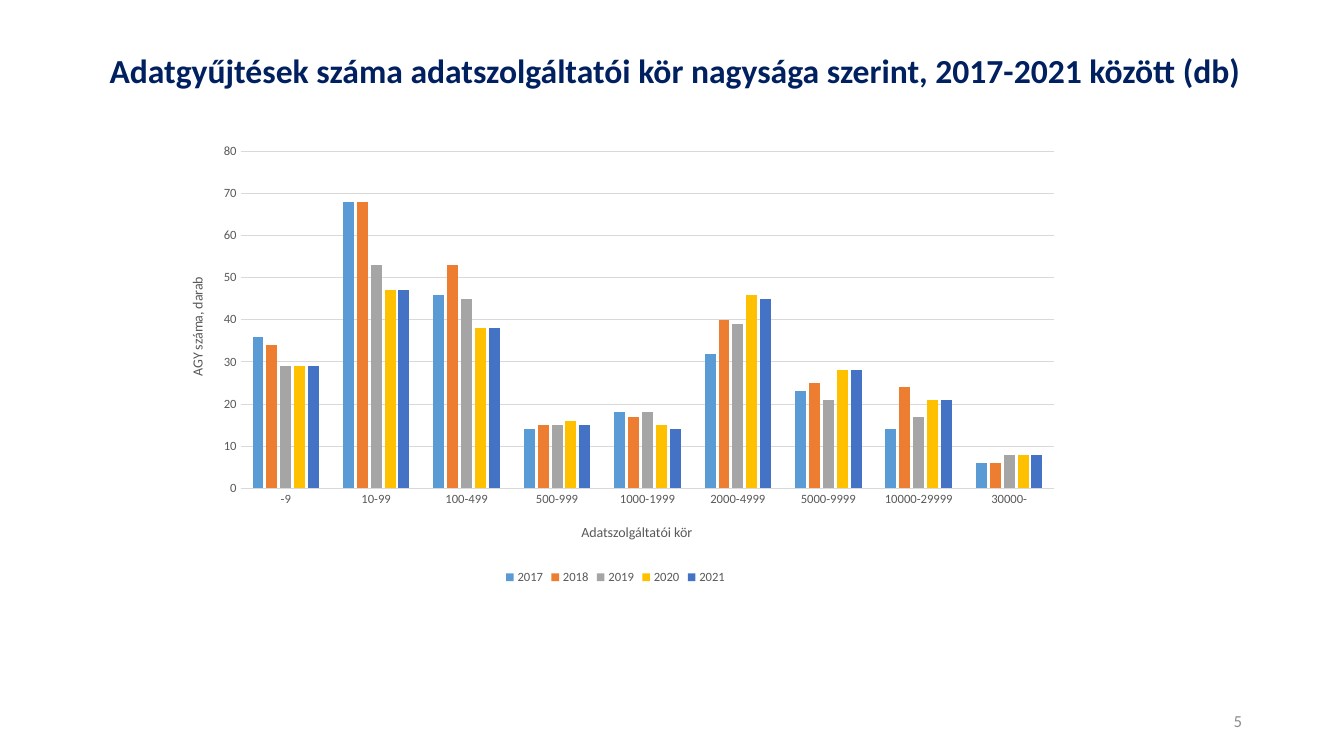
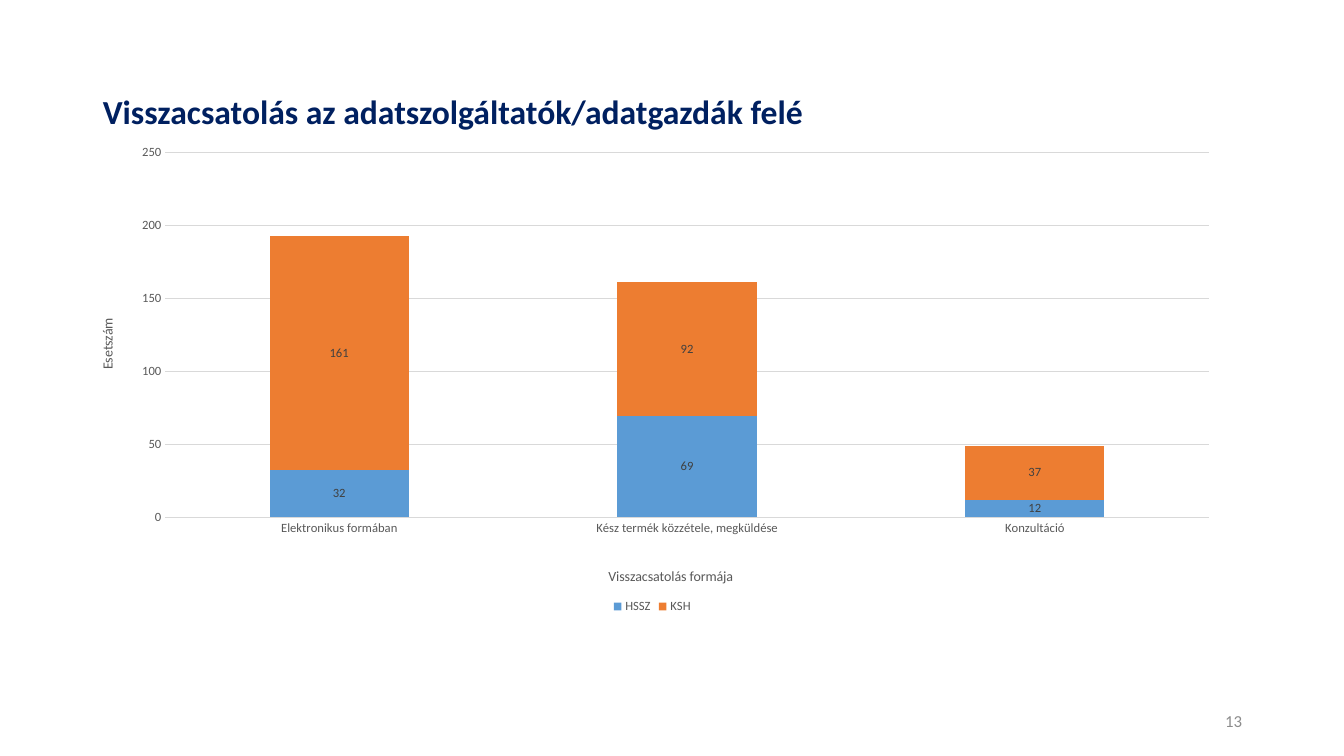
from dataclasses import dataclass

from lxml import etree
from pptx import Presentation
from pptx.chart.data import CategoryChartData as ChartData
from pptx.dml.color import RGBColor as Rgb
from pptx.enum.chart import XL_CHART_TYPE as Kind
from pptx.enum.chart import XL_LABEL_POSITION as LabelPos
from pptx.enum.chart import XL_LEGEND_POSITION as LegendPos
from pptx.enum.chart import XL_TICK_MARK as Tick
from pptx.enum.text import MSO_ANCHOR as Anchor
from pptx.enum.text import MSO_AUTO_SIZE as AutoSize
from pptx.enum.text import PP_ALIGN as Align
from pptx.oxml.ns import qn
from pptx.util import Inches, Pt

TITLE_ONLY = 5


@dataclass(frozen=True)
class Theme:
    """Colours and type sizes of the whole presentation."""
    font: str = "Calibri"
    heading: str = "002060"
    page: str = "8C8C8C"
    axis: str = "595959"
    grid: str = "D9D9D9"
    label: str = "404040"
    series: tuple = ("5B9BD5", "ED7D31", "A5A5A5", "FFC000", "4472C4")
    heading_size: int = 24
    page_size: int = 12
    axis_title_size: int = 10
    chart_size: int = 9
    hairline: float = 0.75


class Deck:
    """Holds the style and the current slide; places are percents of the slide."""

    def __init__(self, theme):
        self.theme = theme
        self.show = Presentation()
        self.show.slide_width, self.show.slide_height = Inches(13.33), Inches(7.5)
        self.slide = None

    def new_slide(self):
        self.slide = self.show.slides.add_slide(self.show.slide_layouts[TITLE_ONLY])

    def box(self, left, top, width, height):
        wide, high = self.show.slide_width, self.show.slide_height
        return [int(share * side / 100) for share, side in
                ((left, wide), (top, high), (width, wide), (height, high))]

    def style(self, font, size, color, bold=False):
        font.name, font.size, font.bold = self.theme.font, Pt(size), bold
        font.color.rgb = Rgb.from_string(color)

    def set_text(self, frame, text, size, color, align, bold=False):
        frame.word_wrap, frame.auto_size = True, AutoSize.NONE
        frame.vertical_anchor = Anchor.MIDDLE
        line = frame.paragraphs[0]
        line.alignment = align
        run = line.add_run()
        run.text = text
        self.style(run.font, size, color, bold)
        return line

    def title(self, text, place, align=Align.LEFT):
        heading = self.slide.shapes.title
        heading.left, heading.top, heading.width, heading.height = self.box(*place)
        line = self.set_text(heading.text_frame, text, self.theme.heading_size,
                             self.theme.heading, align, bold=True)
        line.line_spacing = 0.9

    def page_number(self, number):
        corner = self.slide.shapes.add_textbox(*self.box(70.67, 92.67, 22.5, 5.33))
        self.set_text(corner.text_frame, str(number), self.theme.page_size,
                      self.theme.page, Align.RIGHT)

    @staticmethod
    def lay_out(part, **shares):
        """Fix the place of a chart part, in shares of the chart."""
        layout = part.find(qn("c:layout"))
        if layout is None:
            layout = etree.Element(qn("c:layout"))
            part.insert(0 if part.find(qn("c:tx")) is None else 1, layout)
        manual = etree.SubElement(layout, qn("c:manualLayout"))
        if "w" in shares:
            etree.SubElement(manual, qn("c:layoutTarget")).set("val", "inner")
        for side in ("x", "y"):
            etree.SubElement(manual, qn(f"c:{side}Mode")).set("val", "edge")
        for side, share in shares.items():
            etree.SubElement(manual, qn(f"c:{side}")).set("val", str(share))

    def axis(self, axis, title, corner):
        axis.major_tick_mark = axis.minor_tick_mark = Tick.NONE
        self.style(axis.tick_labels.font, self.theme.chart_size, self.theme.axis)
        run = axis.axis_title.text_frame.paragraphs[0].add_run()
        run.text = title
        self.style(run.font, self.theme.axis_title_size, self.theme.axis)
        self.lay_out(axis.axis_title._element, x=corner[0], y=corner[1])

    def hairline(self, line):
        line.color.rgb = Rgb.from_string(self.theme.grid)
        line.width = Pt(self.theme.hairline)

    def columns(self, kind, place, categories, series, plot_area, category_axis,
                value_axis, top_value, step, gap, overlap, labelled=False):
        table = ChartData()
        table.categories = categories
        for name, values in series.items():
            table.add_series(name, values)
        chart = self.slide.shapes.add_chart(kind, *self.box(*place), table).chart
        chart.has_title = False
        self.style(chart.font, self.theme.chart_size, self.theme.axis)

        # Bars
        plot = chart.plots[0]
        plot.gap_width, plot.overlap, plot.vary_by_categories = gap, overlap, False
        for bars, color in zip(plot.series, self.theme.series):
            bars.format.fill.solid()
            bars.format.fill.fore_color.rgb = Rgb.from_string(color)
        if labelled:
            plot.has_data_labels = True
            plot.data_labels.show_value = True
            plot.data_labels.position = LabelPos.CENTER
            self.style(plot.data_labels.font, self.theme.chart_size, self.theme.label)

        # Axes
        across, up = chart.category_axis, chart.value_axis
        self.axis(across, *category_axis)
        self.axis(up, *value_axis)
        up.axis_title._element.find(f".//{qn('a:bodyPr')}").set("rot", "-5400000")
        up.minimum_scale, up.maximum_scale, up.major_unit = 0, top_value, step
        up.format.line.fill.background()
        self.hairline(across.format.line)
        self.hairline(up.major_gridlines.format.line)
        frame = chart._chartSpace.find(f".//{qn('c:plotArea')}")
        self.lay_out(frame, **dict(zip("xywh", plot_area)))

        # Legend
        chart.has_legend = True
        chart.legend.position = LegendPos.BOTTOM
        chart.legend.include_in_layout = False
        self.style(chart.legend.font, self.theme.chart_size, self.theme.axis)


def main():
    deck = Deck(Theme())

    # Surveys by number of respondents
    deck.new_slide()
    deck.title("Adatgyűjtések száma adatszolgáltatói kör nagysága szerint, "
               "2017-2021 között (db)", (4.2, 3.87, 92.05, 11.47), Align.CENTER)
    deck.page_number(5)
    deck.columns(
        Kind.COLUMN_CLUSTERED, (11.78, 17.6, 68.04, 60.27),
        ["-9", "10-99", "100-499", "500-999", "1000-1999", "2000-4999",
         "5000-9999", "10000-29999", "30000-"],
        {"2017": [36, 68, 46, 14, 18, 32, 23, 14, 6],
         "2018": [34, 68, 53, 15, 17, 40, 25, 24, 6],
         "2019": [29, 53, 45, 15, 18, 39, 21, 17, 8],
         "2020": [29, 47, 38, 16, 15, 46, 28, 21, 8],
         "2021": [29, 47, 38, 15, 14, 45, 28, 21, 8]},
        plot_area=(0.09, 0.04, 0.89, 0.74),
        category_axis=("Adatszolgáltatói kör", (0.46, 0.85)),
        value_axis=("AGY száma, darab", (0.03, 0.31)),
        top_value=80, step=10, gap=219, overlap=-27)

    # Feedback by form
    deck.new_slide()
    deck.title("Visszacsatolás az adatszolgáltatók/adatgazdák felé",
               (6.9, 5.33, 86.27, 19.33))
    deck.page_number(13)
    deck.columns(
        Kind.COLUMN_STACKED, (5.4, 18.27, 86.27, 63.47),
        ["Elektronikus formában", "Kész termék közzétele, megküldése", "Konzultáció"],
        {"HSSZ": [32, 69, 12], "KSH": [161, 92, 37]},
        plot_area=(0.08, 0.03, 0.9, 0.76),
        category_axis=("Visszacsatolás formája", (0.46, 0.89)),
        value_axis=("Esetszám", (0.02, 0.37)),
        top_value=250, step=50, gap=150, overlap=100, labelled=True)

    deck.show.save("out.pptx")


if __name__ == "__main__":
    main()
